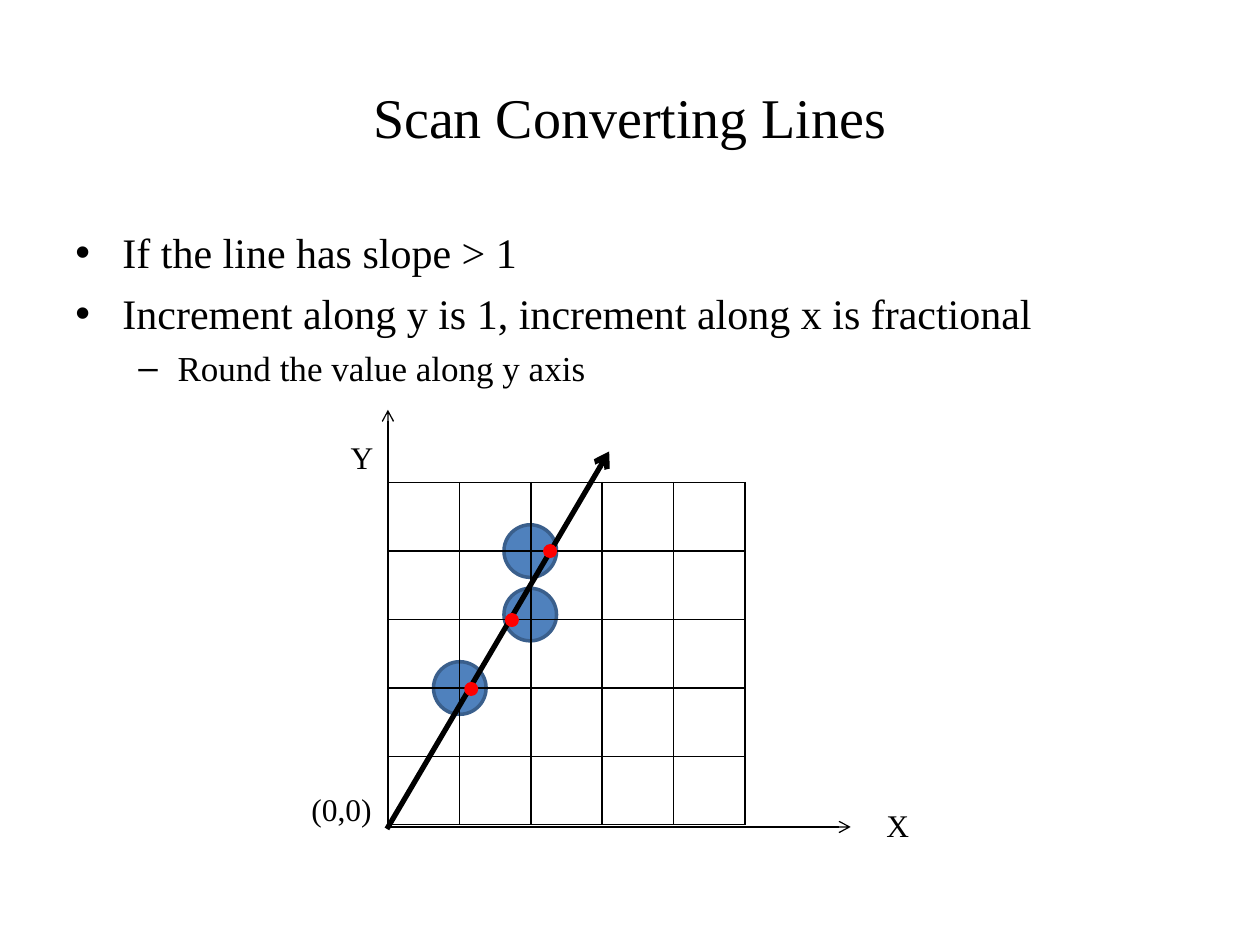
from lxml.etree import SubElement
from pptx import Presentation
from pptx.dml.color import RGBColor
from pptx.enum.shapes import MSO_CONNECTOR as Connector, MSO_SHAPE as Shape
from pptx.enum.text import MSO_ANCHOR as Anchor, PP_ALIGN as Align
from pptx.oxml.ns import qn
from pptx.util import Cm, Pt

FONT = "Times New Roman"
BLACK, BLUE, DARK_BLUE, RED = "000000", "4F81BD", "3A5F8C", "FF0000"
GRID_LEFT, GRID_TOP, GRID_COUNT = 7.82, 9.73, 5
CELL_WIDTH, CELL_HEIGHT = 1.44, 1.38
PIXELS = [(9.27, 13.87), (10.69, 12.39), (10.69, 11.11)]
LINE_POINTS = [(9.5, 13.89), (10.32, 12.5), (11.09, 11.11)]
BULLETS = [
    # text, size, bullet, left margin, hanging indent
    ("If the line has slope > 1", 24, "•", 0.95, 0.95),
    ("Increment along y is 1, increment along x is fractional", 24, "•", 0.95, 0.95),
    ("Round the value along y axis", 20, "–", 2.06, 0.79),
]


def color(value):
    return RGBColor.from_string(value)


def style_para(para, size):
    for span in para.runs:
        span.font.name = FONT
        span.font.size = Pt(size)
        span.font.color.rgb = color(BLACK)


def add_box(page, left, top, width, height, anchor):
    box = page.shapes.add_textbox(Cm(left), Cm(top), Cm(width), Cm(height))
    box.text_frame.word_wrap = True
    box.text_frame.vertical_anchor = anchor
    return box


def add_label(page, text, size, left, top, width, height):
    box = add_box(page, left, top, width, height, Anchor.MIDDLE)
    para = box.text_frame.paragraphs[0]
    para.text = text
    para.alignment = Align.CENTER
    style_para(para, size)


def add_bullets(page):
    frame = add_box(page, 1.27, 4.45, 22.86, 12.57, Anchor.TOP).text_frame
    frame.text = "\n".join(item[0] for item in BULLETS)
    for para, (_, size, bullet, margin, hanging) in zip(frame.paragraphs, BULLETS):
        style_para(para, size)
        para.space_before = Pt(size / 4)
        props = para._p.get_or_add_pPr()
        props.set("marL", str(Cm(margin)))
        props.set("indent", str(-Cm(hanging)))
        SubElement(props, qn("a:buFont"), typeface="Arial")
        SubElement(props, qn("a:buChar"), char=bullet)


def add_dot(page, center, diameter, fill, line):
    left, top = (Cm(value - diameter / 2) for value in center)
    dot = page.shapes.add_shape(Shape.OVAL, left, top, Cm(diameter), Cm(diameter))
    dot.shadow.inherit = False
    dot.fill.solid()
    dot.fill.fore_color.rgb = color(fill)
    dot.line.color.rgb = color(line)
    dot.line.width = Pt(2)


def add_borders(cell):
    props = cell._tc.get_or_add_tcPr()
    for position, side in enumerate(("lnL", "lnR", "lnT", "lnB")):
        border = SubElement(props, qn(f"a:{side}"), w=str(Pt(1)))
        fill = SubElement(border, qn("a:solidFill"))
        SubElement(fill, qn("a:srgbClr"), val=BLACK)
        # Borders come before the fill in a cell's properties
        props.insert(position, border)


def add_grid(page):
    table = page.shapes.add_table(
        GRID_COUNT, GRID_COUNT, Cm(GRID_LEFT), Cm(GRID_TOP),
        Cm(GRID_COUNT * CELL_WIDTH), Cm(GRID_COUNT * CELL_HEIGHT)).table
    table.first_row = table.horz_banding = False
    for column in table.columns:
        column.width = Cm(CELL_WIDTH)
    for row in table.rows:
        row.height = Cm(CELL_HEIGHT)
    for cell in table.iter_cells():
        cell.fill.background()
        add_borders(cell)


def add_arrow(page, start, end, width):
    arrow = page.shapes.add_connector(
        Connector.STRAIGHT, *(Cm(value) for value in start + end))
    arrow.line.color.rgb = color(BLACK)
    arrow.line.width = Pt(width)
    SubElement(arrow.line._get_or_add_ln(), qn("a:tailEnd"), type="arrow")
    SubElement(arrow._element.spPr, qn("a:effectLst"))


def main():
    deck = Presentation()
    deck.slide_width, deck.slide_height = Cm(25.4), Cm(19.05)
    page = deck.slides.add_slide(deck.slide_layouts[6])

    for center in PIXELS:
        add_dot(page, center, 1.06, BLUE, DARK_BLUE)
    add_label(page, "Scan Converting Lines", 32, 1.27, 0.76, 22.86, 3.18)
    add_bullets(page)
    add_grid(page)

    add_arrow(page, (GRID_LEFT, 16.67), (17.15, 16.67), 0.75)
    add_arrow(page, (GRID_LEFT, 16.71), (GRID_LEFT, 8.26), 0.75)
    add_label(page, "Y", 18, 6.56, 8.47, 1.48, 1.48)
    add_label(page, "X", 18, 17.36, 15.88, 1.48, 1.48)
    add_label(page, "(0,0)", 18, 5.93, 15.88, 1.91, 0.85)

    add_arrow(page, (7.8, 16.71), (12.28, 9.1), 3)
    for center in LINE_POINTS:
        add_dot(page, center, 0.21, RED, RED)

    deck.save("out.pptx")


if __name__ == "__main__":
    main()
